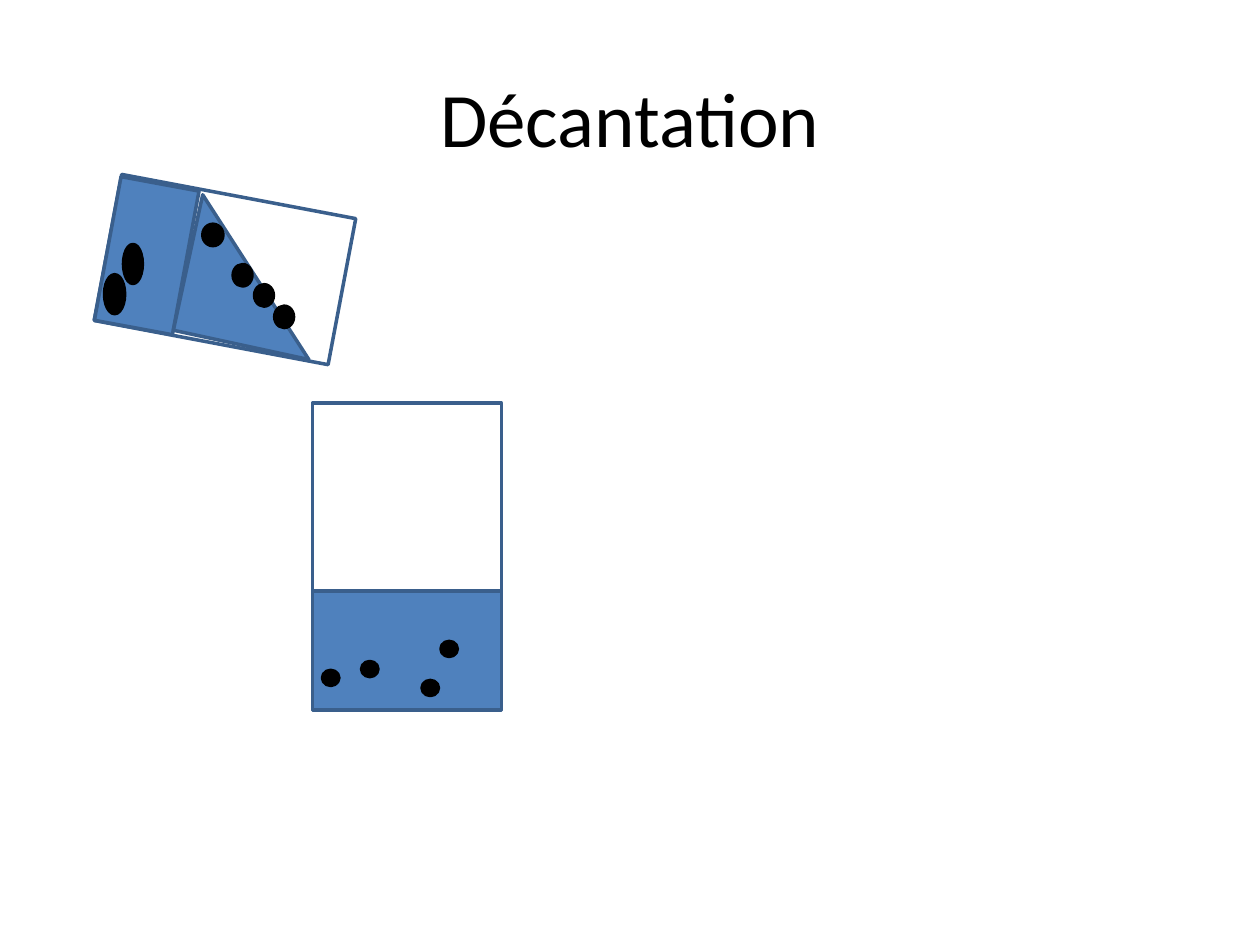
import pptx
import pptx.util
import pptx.dml.color
import pptx.enum.shapes
import pptx.enum.text

SHAPES = pptx.enum.shapes.MSO_SHAPE

THEME = {
    "font": "Calibri",
    "title_size": 44,
    "line_width": 2,
    "ink": "000000",
    "water": "4F81BD",
    "glass": "3A5F8C",
}

COLUMNS, ROWS = 100, 75
SLIDE_WIDTH, SLIDE_HEIGHT = pptx.util.Inches(10), pptx.util.Inches(7.5)

TITLE = ("Décantation", (5, 3, 90, 12.5))

VESSELS = [
    {"area": (24.8, 32, 15, 24.4)},
    {"area": (24.8, 46.9, 15, 9.4), "fill": "water"},
    {"area": (8.4, 15.5, 18.9, 11.8), "tilt": 10.7},
    {"area": (8.5, 14.5, 6.3, 11.6), "tilt": 10.5, "fill": "water"},
    {"area": (14.8, 16.5, 11, 11), "tilt": 12.2, "fill": "water",
     "outline": SHAPES.RIGHT_TRIANGLE},
]

GRAINS = [
    ((1.6, 3.1), [(8.3, 21.8)]),
    ((1.5, 3.1), [(9.8, 19.4)]),
    ((1.6, 1.7), [(16.1, 17.8)]),
    ((1.5, 1.7), [(18.5, 21), (20.2, 22.6), (21.8, 24.3)]),
    ((1.3, 1.2), [(25.6, 53.2), (28.7, 52.5), (33.5, 54), (35, 50.9)]),
]


def color(role):
    return pptx.dml.color.RGBColor.from_string(THEME[role])


def place(area):
    left, top, width, height = area
    column, row = SLIDE_WIDTH / COLUMNS, SLIDE_HEIGHT / ROWS
    return [round(v) for v in (left * column, top * row, width * column, height * row)]


def add_text(slide, text, area, size, role, align, anchor):
    box = slide.shapes.add_textbox(*place(area))
    frame = box.text_frame
    frame.word_wrap = True
    frame.vertical_anchor = anchor
    paragraph = frame.paragraphs[0]
    paragraph.alignment = align
    run = paragraph.add_run()
    run.text = text
    run.font.name = THEME["font"]
    run.font.size = pptx.util.Pt(THEME[size])
    run.font.color.rgb = color(role)


def add_part(slide, area, outline=SHAPES.RECTANGLE, fill=None, line="glass", tilt=0):
    part = slide.shapes.add_shape(outline, *place(area))
    part.shadow.inherit = False
    part.rotation = tilt
    if fill:
        part.fill.solid()
        part.fill.fore_color.rgb = color(fill)
    else:
        part.fill.background()
    part.line.color.rgb = color(line)
    part.line.width = pptx.util.Pt(THEME["line_width"])


def main():
    deck = pptx.Presentation()
    deck.slide_width, deck.slide_height = SLIDE_WIDTH, SLIDE_HEIGHT
    slide = deck.slides.add_slide(deck.slide_layouts[6])

    title, title_area = TITLE
    add_text(slide, title, title_area, size="title_size", role="ink",
             align=pptx.enum.text.PP_ALIGN.CENTER,
             anchor=pptx.enum.text.MSO_ANCHOR.MIDDLE)

    for vessel in VESSELS:
        add_part(slide, **vessel)

    for extent, corners in GRAINS:
        for corner in corners:
            add_part(slide, corner + extent, outline=SHAPES.FLOWCHART_CONNECTOR,
                     fill="ink", line="ink")

    deck.save("out.pptx")


if __name__ == "__main__":
    main()
